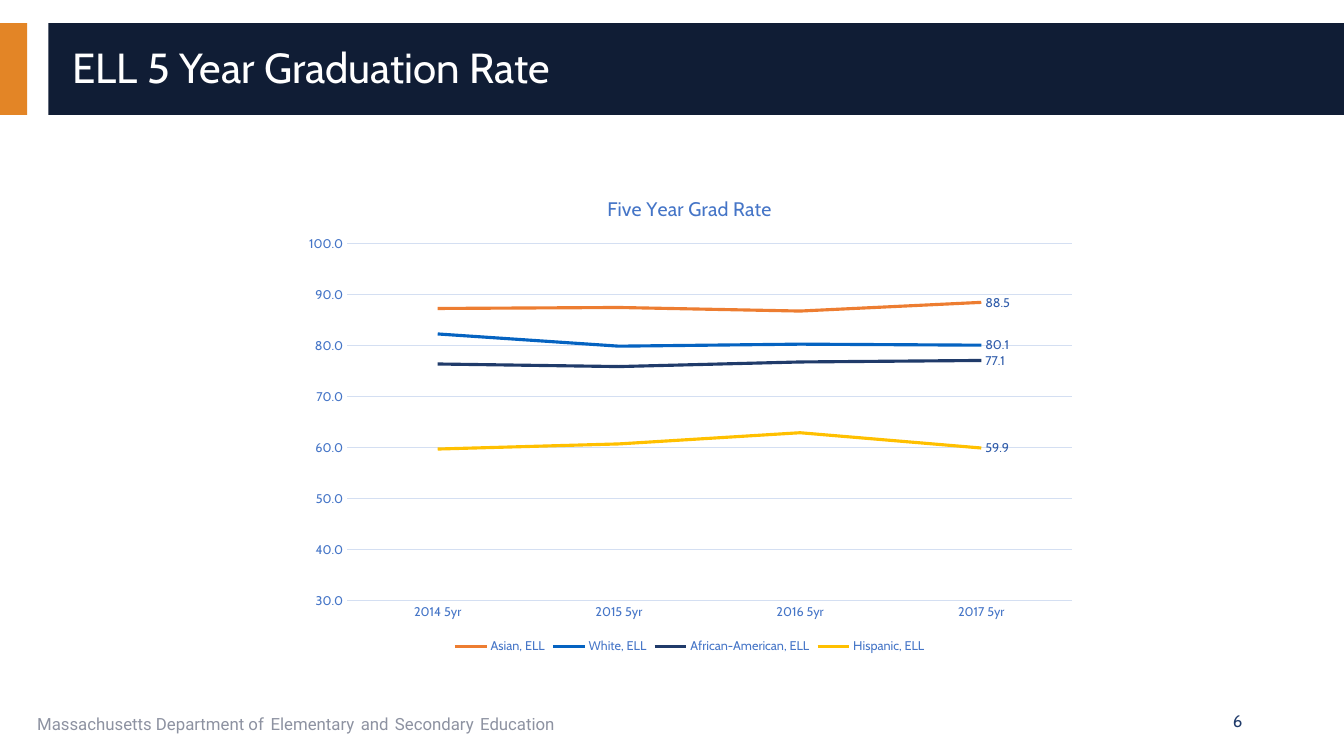
"""Build the slide on five-year graduation rates of English language learners."""
from dataclasses import dataclass
from typing import Any

import lxml.etree
import pptx
import pptx.chart.data
import pptx.dml.color
import pptx.enum.chart
import pptx.enum.shapes
import pptx.enum.text
import pptx.oxml.ns
import pptx.util
from pptx.util import Inches

RGBColor = pptx.dml.color.RGBColor
ORANGE = RGBColor(0xE3, 0x85, 0x26)
DARK_NAVY = RGBColor(0x10, 0x1D, 0x35)
NAVY = RGBColor(0x20, 0x3B, 0x6A)
GRAY = RGBColor(0x8D, 0x92, 0xA1)
WHITE = RGBColor(0xFF, 0xFF, 0xFF)
CHART_BLUE = RGBColor(0x45, 0x75, 0xC7)
LABEL_BLUE = RGBColor(0x30, 0x5C, 0xAA)
GRID_BLUE = RGBColor(0xD4, 0xDF, 0xF2)

Box = tuple[float, float, float, float]


@dataclass(frozen=True)
class TextStyle:
    size: float
    color: RGBColor
    name: str = "Cabin"


@dataclass(frozen=True)
class Band:
    box: Box
    color: RGBColor


@dataclass(frozen=True)
class Label:
    box: Box
    runs: list[tuple[str, TextStyle]]
    format: dict[str, Any]


@dataclass(frozen=True)
class RateLine:
    name: str
    rates: tuple[float, ...]
    color: RGBColor


FOOTER = TextStyle(12, GRAY, "Roboto")
FOOTER_GAP = TextStyle(18, NAVY, "Roboto")
AXIS_TEXT = TextStyle(9, CHART_BLUE)

BANDS = [
    Band((0, 0.23, 0.27, 0.91), ORANGE),
    Band((0.48, 0.23, 12.85, 0.91), DARK_NAVY),
]
LABELS = [
    Label(
        (0.27, 6.95, 8.44, 0.4),
        [
            ("Massachusetts Department of", FOOTER),
            *(
                run
                for word in ("Elementary", "and", "Secondary", "Education")
                for run in ((" ", FOOTER_GAP), (word, FOOTER))
            ),
        ],
        {},
    ),
    Label(
        (9.42, 6.95, 3, 0.4),
        [("6", TextStyle(12, NAVY))],
        {"alignment": pptx.enum.text.PP_ALIGN.RIGHT},
    ),
    Label(
        (0.62, 0.39, 12.44, 0.6),
        [("ELL 5 Year Graduation Rate", TextStyle(30, WHITE))],
        {"line_spacing": 0.9},
    ),
]
YEARS = ["2014 5yr", "2015 5yr", "2016 5yr", "2017 5yr"]
RATE_LINES = [
    RateLine("Asian, ELL", (87.3, 87.5, 86.8, 88.5), RGBColor(0xED, 0x7D, 0x31)),
    RateLine("White, ELL", (82.3, 79.9, 80.3, 80.1), RGBColor(0x05, 0x63, 0xC1)),
    RateLine("African-American, ELL", (76.4, 75.9, 76.8, 77.1), NAVY),
    RateLine("Hispanic, ELL", (59.7, 60.7, 62.9, 59.9), RGBColor(0xFF, 0xC0, 0x00)),
]
PLOT_LAYOUT = {
    "layoutTarget": "inner", "xMode": "edge", "yMode": "edge",
    "x": 0.07, "y": 0.14, "w": 0.91, "h": 0.74,
}


def apply_format(target: Any, values: dict[str, Any]) -> None:
    """Set every attribute in values on the target."""
    for attribute, value in values.items():
        setattr(target, attribute, value)


def style_font(font: Any, style: TextStyle) -> None:
    """Give a font its face, size and colour."""
    apply_format(font, {"name": style.name, "size": pptx.util.Pt(style.size), "bold": False})
    font.color.rgb = style.color


def style_line(line: Any, color: RGBColor, width: float) -> None:
    """Give a line its colour and width in points."""
    line.color.rgb = color
    line.width = pptx.util.Pt(width)


def add_band(slide: Any, band: Band) -> None:
    """Draw a plain filled rectangle."""
    shape = slide.shapes.add_shape(
        pptx.enum.shapes.MSO_SHAPE.RECTANGLE, *map(Inches, band.box)
    )
    shape.shadow.inherit = False
    shape.fill.solid()
    shape.fill.fore_color.rgb = band.color
    shape.line.fill.background()


def add_label(slide: Any, label: Label) -> None:
    """Draw a one-paragraph text box."""
    text_frame = slide.shapes.add_textbox(*map(Inches, label.box)).text_frame
    apply_format(text_frame, {
        "word_wrap": True,
        "vertical_anchor": pptx.enum.text.MSO_ANCHOR.MIDDLE,
    })
    paragraph = text_frame.paragraphs[0]
    apply_format(paragraph, label.format)
    for text, style in label.runs:
        run = paragraph.add_run()
        run.text = text
        style_font(run.font, style)


def place_plot(chart: Any) -> None:
    """Fix the inner plot area inside the chart frame."""
    qualify = pptx.oxml.ns.qn
    plot_area = chart.plots[0]._element.getparent()
    for old_layout in plot_area.findall(qualify("c:layout")):
        plot_area.remove(old_layout)
    layout = lxml.etree.Element(qualify("c:layout"))
    manual = lxml.etree.SubElement(layout, qualify("c:manualLayout"))
    for tag, value in PLOT_LAYOUT.items():
        lxml.etree.SubElement(manual, qualify(f"c:{tag}")).set("val", str(value))
    plot_area.insert(0, layout)


def style_axes(chart: Any) -> None:
    """Format both axes and the gridlines."""
    no_tick = pptx.enum.chart.XL_TICK_MARK.NONE
    for axis in (chart.category_axis, chart.value_axis):
        apply_format(axis, {"major_tick_mark": no_tick, "minor_tick_mark": no_tick})
        style_font(axis.tick_labels.font, AXIS_TEXT)
    style_line(chart.category_axis.format.line, GRID_BLUE, 0.75)
    value_axis = chart.value_axis
    apply_format(value_axis, {"minimum_scale": 30, "maximum_scale": 100, "major_unit": 10})
    apply_format(value_axis.tick_labels, {"number_format": "0.0", "number_format_is_linked": False})
    value_axis.format.line.fill.background()
    style_line(value_axis.major_gridlines.format.line, GRID_BLUE, 0.75)


def add_rate_chart(slide: Any, box: Box) -> None:
    """Draw the line chart with a value label on each last point."""
    chart_data = pptx.chart.data.CategoryChartData(number_format="0.0")
    chart_data.categories = YEARS
    for rate_line in RATE_LINES:
        chart_data.add_series(rate_line.name, rate_line.rates)
    chart = slide.shapes.add_chart(
        pptx.enum.chart.XL_CHART_TYPE.LINE, *map(Inches, box), chart_data
    ).chart
    style_font(chart.font, TextStyle(10, NAVY))
    apply_format(chart, {"has_title": True, "has_legend": True})
    title = chart.chart_title.text_frame
    title.text = "Five Year Grad Rate"
    style_font(title.paragraphs[0].runs[0].font, TextStyle(14, CHART_BLUE))
    apply_format(chart.legend, {
        "position": pptx.enum.chart.XL_LEGEND_POSITION.BOTTOM,
        "include_in_layout": False,
    })
    style_font(chart.legend.font, AXIS_TEXT)
    style_axes(chart)
    place_plot(chart)
    chart.plots[0].vary_by_categories = False
    for series, rate_line in zip(chart.plots[0].series, RATE_LINES):
        series.smooth = False
        style_line(series.format.line, rate_line.color, 2.25)
        data_label = series.points[len(YEARS) - 1].data_label
        style_font(data_label.font, TextStyle(9, LABEL_BLUE))
        data_label.position = pptx.enum.chart.XL_LABEL_POSITION.RIGHT


def main() -> None:
    """Assemble and save the presentation."""
    presentation = pptx.Presentation()
    apply_format(presentation, {"slide_width": Inches(13.33), "slide_height": Inches(7.5)})
    slide = presentation.slides.add_slide(presentation.slide_layouts[6])
    for band in BANDS:
        add_band(slide, band)
    for label in LABELS:
        add_label(slide, label)
    add_rate_chart(slide, (2.89, 1.75, 7.9, 4.78))
    presentation.save("out.pptx")


if __name__ == "__main__":
    main()
